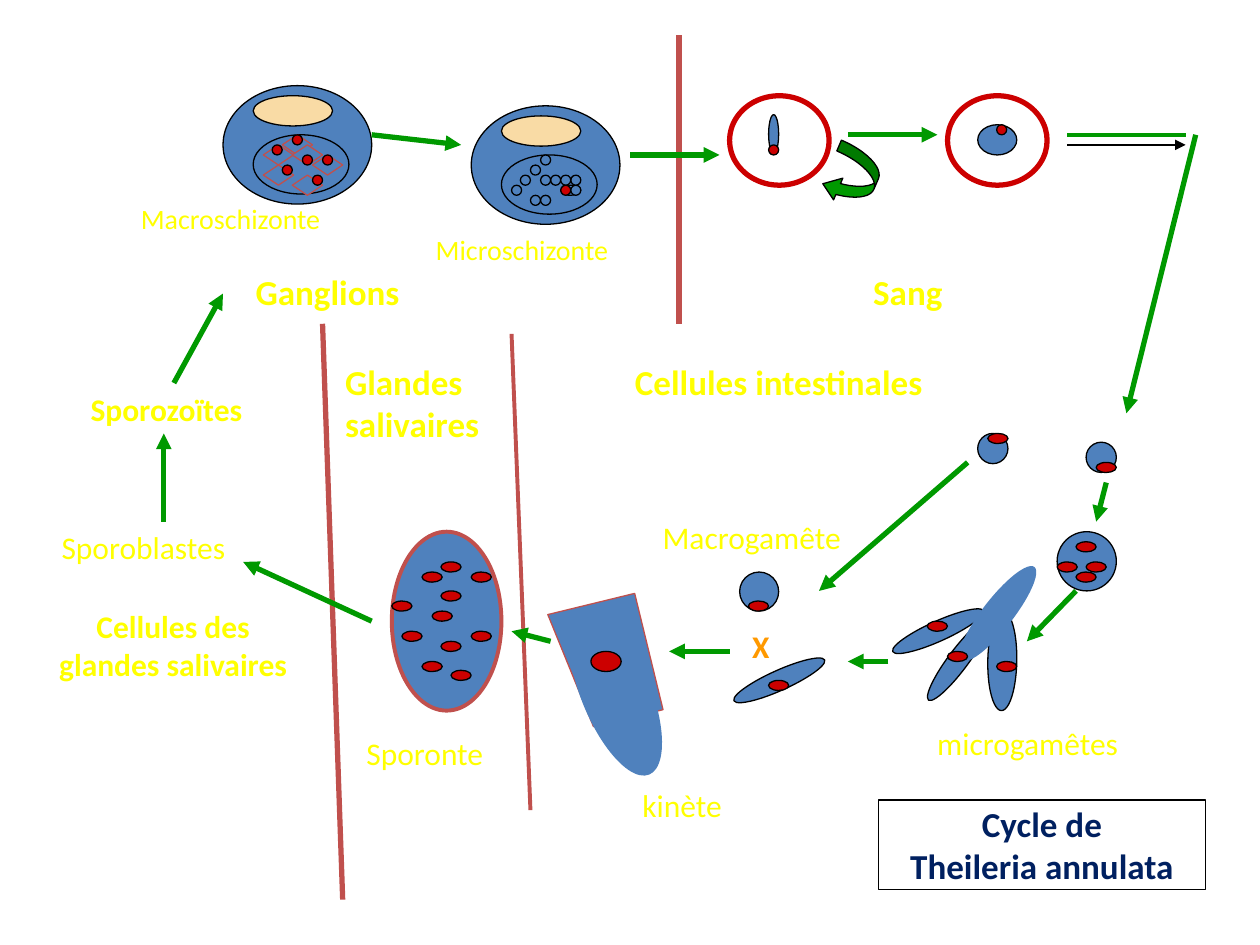
from dataclasses import dataclass
from lxml.etree import SubElement
from pptx import Presentation
from pptx.dml.color import RGBColor as RGB
from pptx.enum.shapes import MSO_CONNECTOR as CONNECTOR, MSO_SHAPE as SHAPE
from pptx.enum.text import MSO_ANCHOR as ANCHOR, PP_ALIGN as ALIGN
from pptx.oxml.ns import qn
from pptx.util import Emu, Pt

PX = 9144  # 100 px to the inch


@dataclass(frozen=True)
class Theme:
    blue: str = "4F81BD"
    red: str = "CC0000"
    brick: str = "C0504D"
    green: str = "009900"
    cream: str = "F9DBA5"
    yellow: str = "FFFF00"
    orange: str = "FF9900"
    navy: str = "002060"
    black: str = "000000"
    white: str = "FFFFFF"
    font: str = "Calibri"
    heading: int = 20
    stage: int = 18
    cell: int = 16
    thin: float = 0.75
    medium: float = 2.25
    thick: float = 3


THEME = Theme()
DOT = (8, 8)
OVAL = (16, 8)


@dataclass
class Box:
    """An area of the slide; its parts are placed from its top left corner."""
    slide: object
    left: int
    top: int
    width: int
    height: int

    def inner(self, left, top, width, height):
        return Box(self.slide, self.left + left, self.top + top, width, height)

    def frame(self):
        return [Emu(v * PX) for v in (self.left, self.top, self.width, self.height)]


def set_format(target, values):
    for name, value in values.items():
        setattr(target, name, value)


def set_line(line, color, width):
    line.color.rgb = RGB.from_string(color)
    line.width = Pt(width)


def add_shape(box, fill=THEME.blue, line=THEME.black, width=THEME.thin,
              kind=SHAPE.OVAL, rotation=0):
    shape = box.slide.shapes.add_shape(kind, *box.frame())
    set_format(shape, {"rotation": rotation})
    shape.shadow.inherit = False
    shape.fill.solid()
    shape.fill.fore_color.rgb = RGB.from_string(fill)
    if line:
        set_line(shape.line, line, width)
    else:
        shape.line.fill.background()
    return shape


def add_each(box, places, size, **look):
    for left, top in places:
        add_shape(box.inner(left, top, *size), **look)


def add_line(box, start, end, color=THEME.green, width=THEME.thick, arrow=True):
    points = [Emu(v * PX) for x, y in (start, end) for v in (box.left + x, box.top + y)]
    connector = box.slide.shapes.add_connector(CONNECTOR.STRAIGHT, *points)
    set_line(connector.line, color, width)
    if arrow:
        SubElement(connector.line._get_or_add_ln(), qn("a:tailEnd"), type="triangle")
    SubElement(connector._element.spPr, qn("a:effectLst"))


def write(text_frame, lines, size, color, bold, align):
    for index, line in enumerate(lines):
        paragraph = text_frame.paragraphs[0] if index == 0 else text_frame.add_paragraph()
        paragraph.alignment = align
        run = paragraph.add_run()
        run.text = line
        set_format(run.font, {"name": THEME.font, "size": Pt(size), "bold": bold})
        run.font.color.rgb = RGB.from_string(color)


def add_label(box, text, size=THEME.stage, color=THEME.yellow, bold=False, align=ALIGN.LEFT):
    text_frame = box.slide.shapes.add_textbox(*box.frame()).text_frame
    text_frame.word_wrap = True
    write(text_frame, [text], size, color, bold, align)


def add_heading(box, text, size=THEME.heading, align=ALIGN.CENTER):
    add_label(box, text, size, bold=True, align=align)


def draw_dividers(box):
    for start, end, width in [((539, 28), (539, 257), THEME.thick),
                              ((406, 265), (421, 643), THEME.medium),
                              ((256, 257), (272, 714), THEME.thick)]:
        add_line(box, start, end, THEME.brick, width, arrow=False)


def draw_host_cell(box):
    add_shape(box)
    add_shape(box.inner(24, 8, 63, 24), THEME.cream)  # nucleus
    add_shape(box.inner(24, 39, 76, 47))  # schizont


def draw_lymph_nodes(box):
    # Macroschizont
    cell = box.inner(94, 12, 118, 94)
    draw_host_cell(cell)
    add_each(cell, [(32, 47), (55, 71), (47, 39), (55, 47), (32, 63), (71, 55)],
             (24, 16), line=THEME.brick, kind=SHAPE.DIAMOND)
    add_each(cell, [(79, 55), (47, 63), (55, 39), (71, 71), (63, 55), (39, 47)],
             DOT, fill=THEME.red)
    # Microschizont
    cell = box.inner(291, 28, 118, 94)
    draw_host_cell(cell)
    add_shape(cell.inner(71, 63, *OVAL))
    add_shape(cell.inner(71, 63, *DOT), THEME.red)
    add_each(cell, [(39, 55), (55, 39), (63, 55), (47, 47), (47, 71), (32, 63),
                    (79, 63), (55, 71), (55, 55), (79, 55), (71, 55)], DOT)
    # Names and arrows
    add_label(box.inner(19, 99, 194, 37), "Macroschizonte", THEME.cell)
    add_label(box.inner(253, 124, 189, 37), "Microschizonte", THEME.cell)
    add_heading(box.inner(0, 154, 354, 44), "Ganglions")
    add_line(box, (212, 51), (283, 59))
    add_line(box, (417, 67), (488, 67))


def draw_blood(box):
    # Red blood cells and their parasites
    add_each(box, [(0, 0), (173, 0)], (79, 71), fill=THEME.white,
             line=THEME.red, width=THEME.thick)
    add_shape(box.inner(31, 15, 8, 31))
    add_shape(box.inner(197, 23, 31, 24))
    add_each(box, [(31, 39), (212, 23)], DOT, fill=THEME.red)
    # Repeated division
    turn = add_shape(box.inner(78, 41, 39, 47), THEME.green,
                     kind=SHAPE.CURVED_LEFT_ARROW, rotation=23.1)
    for index, value in enumerate((0.24, 0.48, 0.33)):
        turn.adjustments[index] = value
    # Heading and arrows
    add_heading(box.inner(47, 134, 189, 44), "Sang")
    add_line(box, (94, 31), (165, 31))
    add_line(box, (268, 39), (362, 39), THEME.black, THEME.thin)
    add_line(box, (268, 31), (362, 31), width=THEME.medium, arrow=False)
    add_line(box, (370, 31), (315, 252))


def draw_gut_cells(box):
    add_heading(box.inner(0, 0, 252, 77), "Cellules intestinales")
    # Gametocytes, dividing stage and macrogamete
    add_each(box, [(284, 63), (370, 70)], (24, 24))
    add_shape(box.inner(347, 141, 47, 47))
    add_shape(box.inner(95, 173, 31, 31))
    # Microgametes
    for left, top, width, height, rotation, line in [
            (213, 212, 79, 16, 335.8, THEME.black), (229, 235, 79, 16, 306.7, THEME.black),
            (264, 232, 79, 23, 271, THEME.black), (253, 194, 94, 24, 128, None),
            (87, 251, 79, 16, 335.8, THEME.black)]:
        add_shape(box.inner(left, top, width, height), line=line, rotation=rotation)
    # Nuclei
    add_each(box, [(292, 63), (378, 86), (362, 149), (347, 165), (370, 165), (362, 173),
                   (299, 244), (244, 212), (260, 236), (118, 259), (102, 196)],
             OVAL, fill=THEME.red)
    # Names and arrows
    add_label(box.inner(95, 212, 31, 40), "X", color=THEME.orange, bold=True)
    add_label(box.inner(24, 125, 188, 40), "Macrogamête")
    add_label(box.inner(242, 289, 186, 40), "microgamêtes")
    for start, end in [((386, 102), (378, 133)), ((362, 188), (323, 228)),
                       ((213, 244), (181, 244)), ((87, 236), (39, 236)),
                       ((276, 86), (158, 188))]:
        add_line(box, start, end)


def draw_kinete(box):
    add_shape(box.inner(0, 12, 95, 71), line=THEME.brick,
              kind=SHAPE.FLOWCHART_MANUAL_INPUT, rotation=256.3)
    add_shape(box.inner(28, 0, 55, 142), line=None, rotation=337.9)
    add_shape(box.inner(36, 39, 24, 16), THEME.red)
    add_label(box.inner(67, 141, 142, 40), "kinète")
    add_line(box, (4, 31), (-27, 23))


def draw_salivary_glands(box):
    add_heading(box.inner(0, 0, 150, 77), "Glandes salivaires", align=ALIGN.LEFT)
    # Sporont
    add_shape(box.inner(47, 141, 87, 142), line=THEME.brick, width=THEME.medium)
    add_each(box, [(71, 244), (110, 220), (86, 228), (79, 204), (86, 188), (110, 173),
                   (47, 196), (55, 220), (71, 173), (86, 165), (94, 251)],
             OVAL, fill=THEME.red)
    add_label(box.inner(17, 297, 134, 40), "Sporonte")
    add_line(box, (31, 212), (-71, 165))


def draw_gland_cells(box):
    add_heading(box.inner(0, 244, 213, 101), "Cellules des glandes salivaires", THEME.stage)
    add_label(box.inner(8, 181, 170, 40), "Sporoblastes")
    add_label(box.inner(31, 72, 168, 40), "Sporozoïtes", bold=True)
    add_line(box, (99, 181), (99, 111))
    add_line(box, (107, 71), (146, 0))


def draw_title(box):
    text_frame = add_shape(box, THEME.white, kind=SHAPE.RECTANGLE).text_frame
    set_format(text_frame, {"word_wrap": False, "vertical_anchor": ANCHOR.MIDDLE})
    write(text_frame, ["Cycle de", "Theileria annulata"], THEME.heading,
          THEME.navy, True, ALIGN.CENTER)


def main():
    presentation = Presentation()
    set_format(presentation, {"slide_width": Emu(1000 * PX), "slide_height": Emu(750 * PX)})
    slide = presentation.slides.add_slide(presentation.slide_layouts[6])
    for draw, area in [(draw_dividers, (0, 0, 1000, 750)),
                       (draw_lymph_nodes, (83, 56, 456, 201)),
                       (draw_blood, (579, 76, 370, 178)),
                       (draw_gut_cells, (492, 281, 428, 329)),
                       (draw_kinete, (433, 478, 209, 181)),
                       (draw_salivary_glands, (264, 281, 151, 337)),
                       (draw_gland_cells, (31, 233, 213, 345)),
                       (draw_title, (697, 635, 260, 71))]:
        draw(Box(slide, *area))
    presentation.save("out.pptx")


if __name__ == "__main__":
    main()
